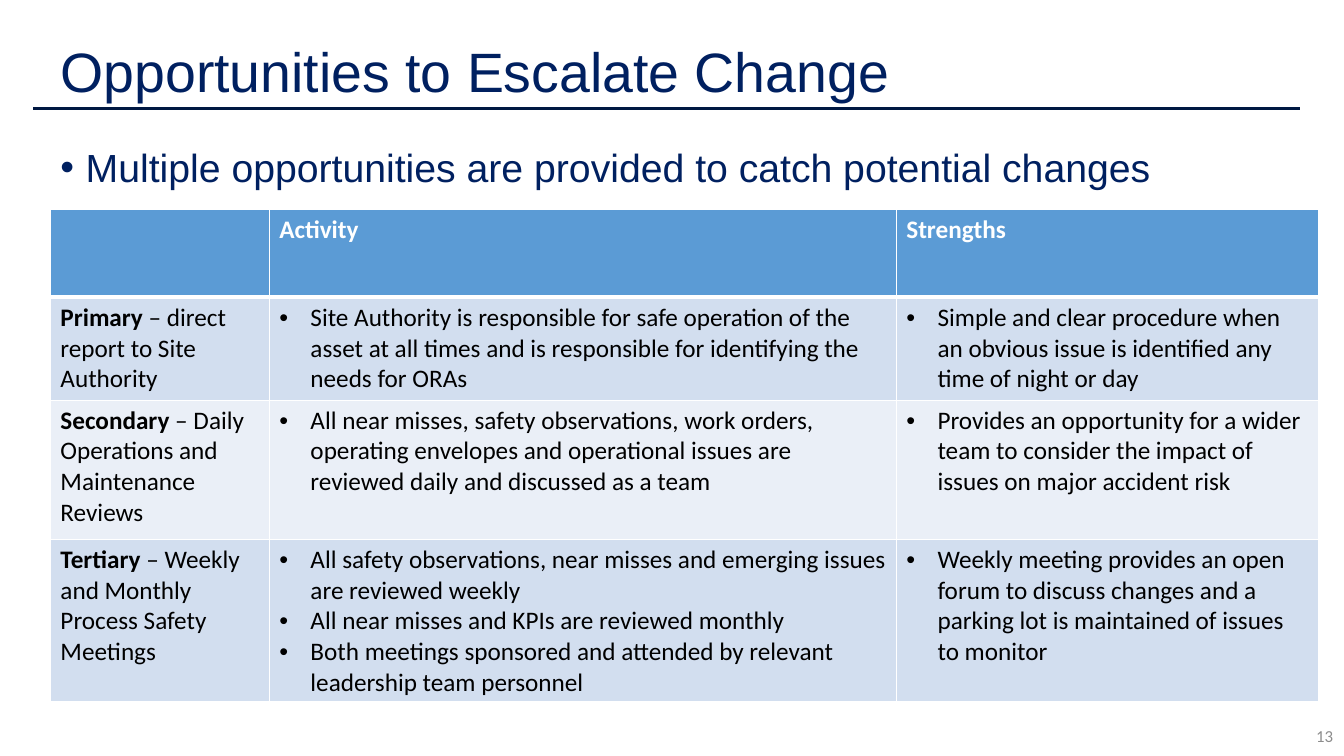
from lxml import etree
from pptx import Presentation
from pptx import util as u
from pptx.dml.color import RGBColor
from pptx.enum import shapes, text
from pptx.oxml import ns

NAVY = RGBColor(0x00, 0x20, 0x60)
RULE = RGBColor(0x00, 0x18, 0x42)
GRAY = RGBColor(0x8C, 0x8C, 0x8C)
WHITE = RGBColor(0xFF, 0xFF, 0xFF)
BLACK = RGBColor(0x00, 0x00, 0x00)
HEADER = RGBColor(0x5B, 0x9B, 0xD5)
BANDS = [RGBColor(0xD2, 0xDE, 0xEF), RGBColor(0xEA, 0xEF, 0xF7)]

COLUMNS = [2.17, 6.22, 4.19]
HEIGHTS = [0.87, 1.02, 1.38, 1.61]
HEADINGS = ["", "Activity", "Strengths"]
LEVELS = [
    (("Primary", " – direct report to Site Authority"),
     ["Site Authority is responsible for safe operation of the asset at all times "
      "and is responsible for identifying the needs for ORAs"],
     ["Simple and clear procedure when an obvious issue is identified any time of night or day"]),
    (("Secondary", " – Daily Operations and Maintenance Reviews"),
     ["All near misses, safety observations, work orders, operating envelopes and "
      "operational issues are reviewed daily and discussed as a team"],
     ["Provides an opportunity for a wider team to consider the impact of issues on "
      "major accident risk"]),
    (("Tertiary", " – Weekly and Monthly Process Safety Meetings"),
     ["All safety observations, near misses and emerging issues are reviewed weekly",
      "All near misses and KPIs are reviewed monthly",
      "Both meetings sponsored and attended by relevant leadership team personnel"],
     ["Weekly meeting provides an open forum to discuss changes and a parking lot is "
      "maintained of issues to monitor"]),
]


class SlideBuilder:
    """Build the elements of one slide in a shared style."""

    def __init__(self, prs):
        self.s = prs.slides.add_slide(prs.slide_layouts[1])
        self.heading_font = "Arial"
        self.table_font = "Calibri"

    def style(self, p, size, color, font, bold=False):
        for r in p.runs:
            r.font.size = u.Pt(size)
            r.font.name = font
            r.font.bold = bold
            r.font.color.rgb = color

    def bullet(self, p, indent):
        pPr = p._p.get_or_add_pPr()
        pPr.set("marL", str(u.Inches(indent)))
        pPr.set("indent", str(-u.Inches(indent)))
        etree.SubElement(pPr, ns.qn("a:buFont"), typeface="Arial")
        etree.SubElement(pPr, ns.qn("a:buChar"), char="•")

    def place(self, sp, left, top, width, height):
        sp.left, sp.top = u.Inches(left), u.Inches(top)
        sp.width, sp.height = u.Inches(width), u.Inches(height)

    def placeholder(self, idx, words, box, size, anchor, indent=None):
        sp = self.s.placeholders[idx]
        self.place(sp, *box)
        tf = sp.text_frame
        tf.text = words
        tf.word_wrap = True
        tf.auto_size = text.MSO_AUTO_SIZE.NONE
        tf.vertical_anchor = anchor
        p = tf.paragraphs[0]
        if indent:
            self.bullet(p, indent)
        p.alignment = text.PP_ALIGN.LEFT
        p.line_spacing = 0.9
        p.space_before = u.Pt(0)
        self.style(p, size, NAVY, self.heading_font)

    def rule(self, x1, x2, y):
        line = self.s.shapes.add_connector(
            shapes.MSO_CONNECTOR.STRAIGHT, u.Inches(x1), u.Inches(y), u.Inches(x2), u.Inches(y))
        line.line.color.rgb = RULE
        line.line.width = u.Pt(2.25)
        etree.SubElement(line._element.spPr, ns.qn("a:effectLst"))

    def page_number(self, number, box):
        sp = self.s.shapes.add_textbox(*map(u.Inches, box))
        tf = sp.text_frame
        tf.text = number
        tf.word_wrap = True
        tf.vertical_anchor = text.MSO_ANCHOR.MIDDLE
        p = tf.paragraphs[0]
        p.alignment = text.PP_ALIGN.RIGHT
        self.style(p, 12, GRAY, self.table_font)

    def cell_format(self, cell, color, top=1, bottom=1):
        tcPr = cell._tc.get_or_add_tcPr()
        for side, width in (("L", 1), ("R", 1), ("T", top), ("B", bottom)):
            ln = etree.SubElement(tcPr, ns.qn(f"a:ln{side}"), w=str(u.Pt(width)))
            fill = etree.SubElement(ln, ns.qn("a:solidFill"))
            etree.SubElement(fill, ns.qn("a:srgbClr"), val=str(WHITE))
        cell.fill.solid()
        cell.fill.fore_color.rgb = color

    def level_cell(self, cell, words):
        p = cell.text_frame.paragraphs[0]
        for part in words:
            p.add_run().text = part
        self.style(p, 18, BLACK, self.table_font)
        p.runs[0].font.bold = True

    def bullet_cell(self, cell, items):
        cell.text_frame.text = "\n".join(items)
        for p in cell.text_frame.paragraphs:
            self.bullet(p, 0.31)
            self.style(p, 18, BLACK, self.table_font)

    def table(self, left, top):
        box = map(u.Inches, (left, top, sum(COLUMNS), sum(HEIGHTS)))
        table = self.s.shapes.add_table(len(HEIGHTS), len(COLUMNS), *box).table
        for column, width in zip(table.columns, COLUMNS):
            column.width = u.Inches(width)
        for row, height in zip(table.rows, HEIGHTS):
            row.height = u.Inches(height)
        for cell, heading in zip(table.rows[0].cells, HEADINGS):
            cell.text_frame.text = heading
            self.style(cell.text_frame.paragraphs[0], 18, WHITE, self.table_font, True)
            self.cell_format(cell, HEADER, bottom=3)
        for i, (level, *lists) in enumerate(LEVELS):
            first, *others = table.rows[i + 1].cells
            self.level_cell(first, level)
            for cell, items in zip(others, lists):
                self.bullet_cell(cell, items)
            for cell in (first, *others):
                self.cell_format(cell, BANDS[i % 2], top=1 if i else 3)


def main():
    prs = Presentation()
    prs.slide_width, prs.slide_height = u.Inches(13.33), u.Inches(7.5)
    slide = SlideBuilder(prs)
    slide.rule(0.33, 12.89, 1.08)
    slide.placeholder(0, "Opportunities to Escalate Change",
                      (0.5, 0.4, 12.25, 0.68), 39.6, text.MSO_ANCHOR.MIDDLE)
    slide.page_number("13", (10.32, 7.1, 3, 0.4))
    slide.placeholder(1, "Multiple opportunities are provided to catch potential changes",
                      (0.5, 1.42, 11.92, 5.34), 28, text.MSO_ANCHOR.TOP, indent=0.25)
    slide.table(0.5, 2.08)
    prs.save("out.pptx")


if __name__ == "__main__":
    main()
